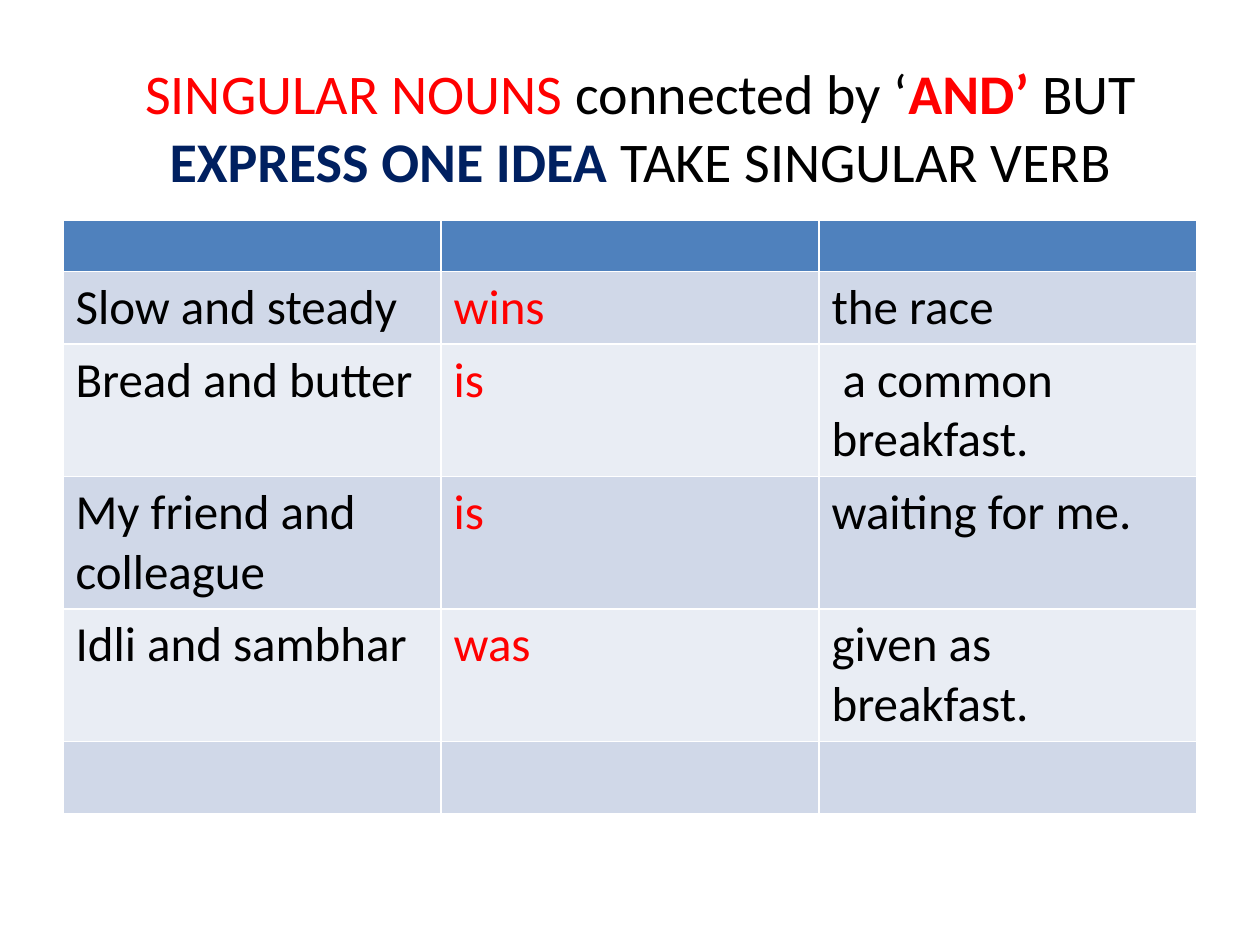
"""Build a grammar slide on singular nouns that express one idea."""
import pptx
import pptx.dml.color
import pptx.enum.text
import pptx.util

Pt = pptx.util.Pt


def color(hex_string):
    return pptx.dml.color.RGBColor.from_string(hex_string)


BLACK, RED, NAVY = "000000", "FF0000", "002060"
HEADER_FILL = "4F81BD"
BAND_FILLS = ["E9EDF4", "D0D8E8"]

presentation = pptx.Presentation()
presentation.slide_width, presentation.slide_height = Pt(720), Pt(540)
slide = presentation.slides.add_slide(presentation.slide_layouts[5])

title = slide.shapes.title
title.left, title.top, title.width, title.height = Pt(36), Pt(18), Pt(660), Pt(108)
title.text_frame.vertical_anchor = pptx.enum.text.MSO_ANCHOR.MIDDLE
paragraph = title.text_frame.paragraphs[0]
paragraph.alignment = pptx.enum.text.PP_ALIGN.CENTER
title_runs = [
    ("SINGULAR NOUNS ", RED, False),
    ("connected by ‘", BLACK, False),
    ("AND’ ", RED, True),
    ("BUT ", BLACK, False),
    ("EXPRESS ONE IDEA ", NAVY, True),
    ("TAKE SINGULAR VERB", BLACK, False),
]
for text, run_color, bold in title_runs:
    run = paragraph.add_run()
    run.text = text
    run.font.name = "Calibri"
    run.font.size = Pt(32)
    run.font.bold = bold
    run.font.color.rgb = color(run_color)

sentences = [
    ("", "", ""),
    ("Slow and steady", "wins", "the race"),
    ("Bread and butter", "is", " a common breakfast."),
    ("My friend and colleague", "is", "waiting for me."),
    ("Idli and sambhar", "was", "given as breakfast."),
    ("", "", ""),
]
row_heights = [29.2, 41.3, 75.6, 75.6, 75.6, 41.3]
column_colors = [BLACK, RED, BLACK]

table = slide.shapes.add_table(
    len(sentences), len(column_colors), Pt(36), Pt(126), Pt(648), Pt(sum(row_heights))
).table
for row_index, (parts, height) in enumerate(zip(sentences, row_heights)):
    table.rows[row_index].height = Pt(height)
    fill = BAND_FILLS[row_index % 2] if row_index else HEADER_FILL
    for column_index, (text, text_color) in enumerate(zip(parts, column_colors)):
        cell = table.cell(row_index, column_index)
        cell.fill.solid()
        cell.fill.fore_color.rgb = color(fill)
        if text:
            cell.text = text
            font = cell.text_frame.paragraphs[0].font
            font.name = "Calibri"
            font.size = Pt(28)
            font.color.rgb = color(text_color)

presentation.save("out.pptx")
